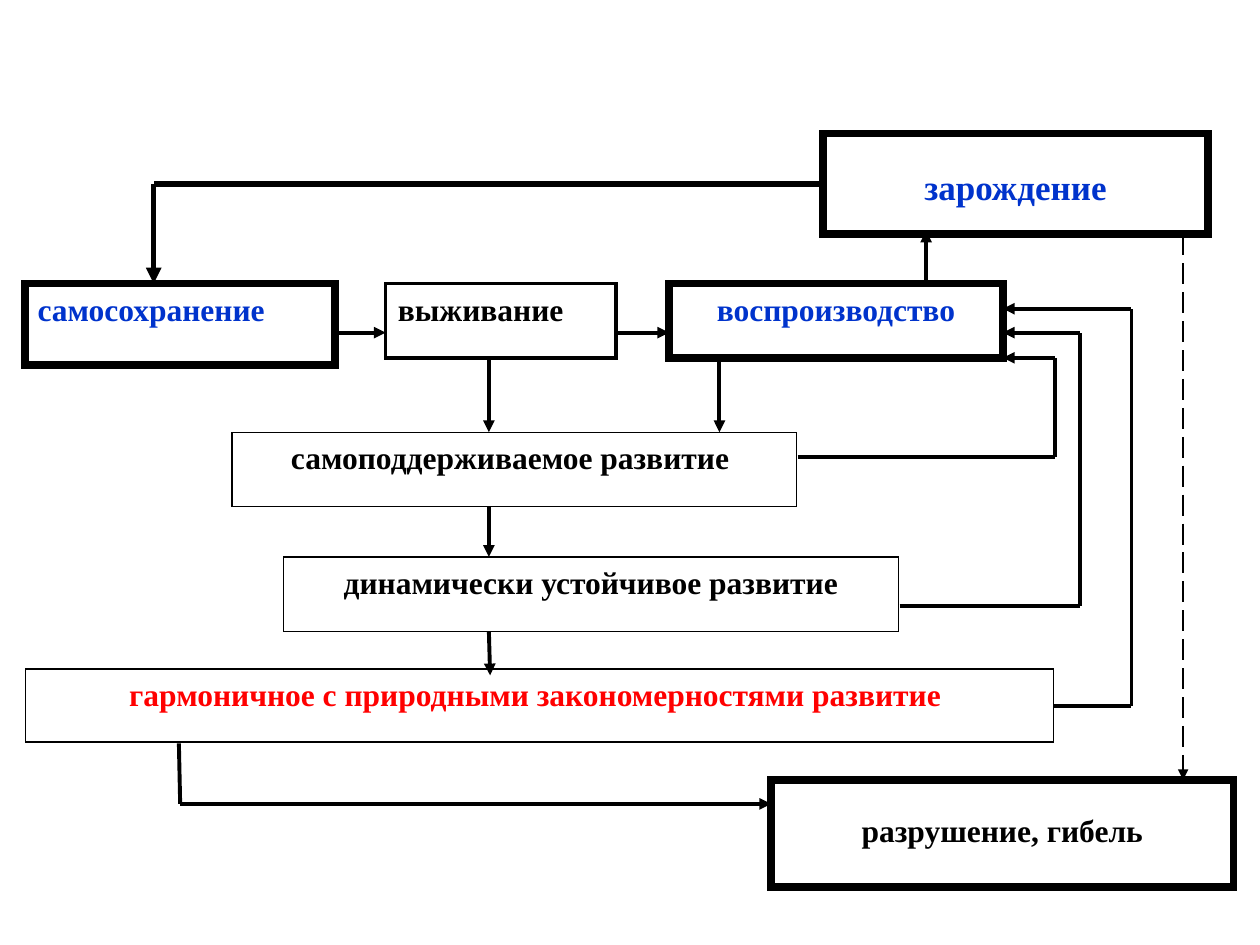
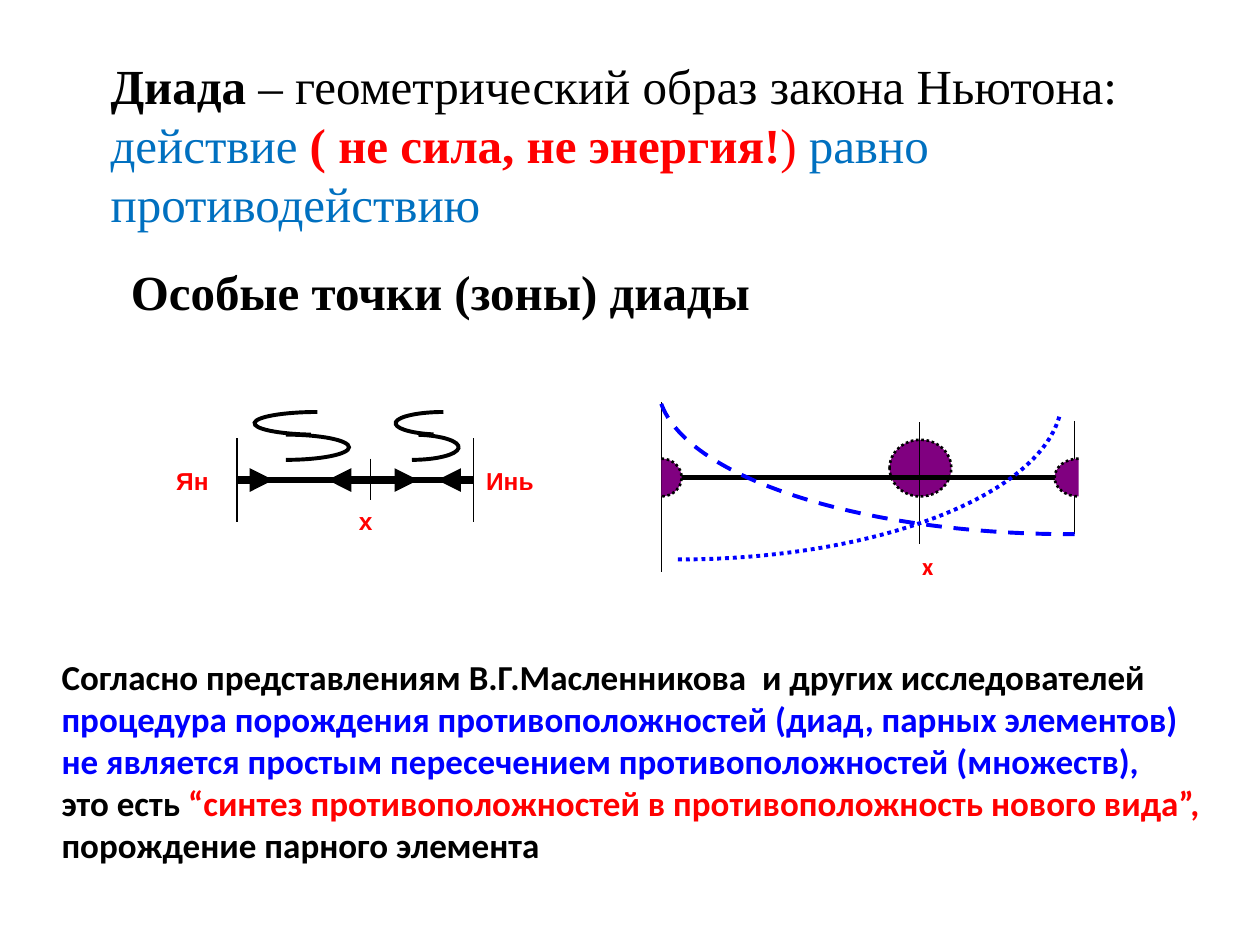
from copy import deepcopy
from dataclasses import dataclass
from math import ceil, cos, radians, sin, tan
from typing import NamedTuple, Optional

from lxml.etree import SubElement
from pptx import Presentation
from pptx.dml.color import RGBColor as RGB
from pptx.enum.dml import MSO_LINE as Dash
from pptx.enum.shapes import MSO_CONNECTOR as Conn, MSO_SHAPE as Geo
from pptx.enum.text import MSO_ANCHOR as Anchor, PP_ALIGN as Align
from pptx.oxml.ns import qn
from pptx.util import Pt

PX = 9144
LEFT, RIGHT = 1, 3


@dataclass(frozen=True)
class Theme:
    black: RGB = RGB(0, 0, 0)
    white: RGB = RGB(255, 255, 255)
    navy: RGB = RGB(0x00, 0x33, 0xCC)
    red: RGB = RGB(255, 0, 0)
    sky: RGB = RGB(0x00, 0x70, 0xC0)
    blue: RGB = RGB(0, 0, 255)
    purple: RGB = RGB(0x80, 0, 0x80)
    serif: str = "Times New Roman"
    sans: str = "Calibri"
    label_font: str = "Arial"
    title: int = 28
    body: int = 20
    stage: int = 18
    label: int = 14
    hair: float = 0.75
    dotted: float = 1.5
    line: float = 2.25
    strong: float = 3
    heavy: float = 4.5


T = Theme()


class Run(NamedTuple):
    text: str
    color: RGB = T.black
    bold: bool = True


class Style(NamedTuple):
    font: str
    size: int
    align: Align = Align.LEFT
    inset_top: int = 5


class Frame(NamedTuple):
    x: int
    y: int
    w: int
    h: int


class Box(NamedTuple):
    frame: Frame
    run: Run
    style: Style
    weight: float = 0


class Route(NamedTuple):
    points: list[tuple[int, int]]
    weight: float = T.line
    arrow: bool = True
    both: bool = False
    dash: Optional[Dash] = None
    start: str = ""
    site: int = 0


class Arc(NamedTuple):
    cx: int
    cy: int
    rx: int
    ry: int
    start: float
    end: float
    color: RGB = T.black
    weight: float = T.line
    dash: Optional[Dash] = None
    fill: Optional[RGB] = None


def write(sp, lines: list[list[Run]], style: Style) -> None:
    tf = sp.text_frame
    tf.word_wrap = True
    tf.vertical_anchor = Anchor.TOP
    tf.margin_top = style.inset_top * PX
    for i, runs in enumerate(lines):
        p = tf.add_paragraph() if i else tf.paragraphs[0]
        p.alignment = style.align
        for run in runs:
            r = p.add_run()
            r.text = run.text
            r.font.name = style.font
            r.font.size = Pt(style.size)
            r.font.bold = run.bold
            r.font.color.rgb = run.color


def paint(sp, fill: Optional[RGB], color: RGB, weight: float, dash: Optional[Dash] = None) -> None:
    sp.shadow.inherit = False
    if fill is None:
        sp.fill.background()
    else:
        sp.fill.solid()
        sp.fill.fore_color.rgb = fill
    if weight:
        sp.line.color.rgb = color
        sp.line.width = Pt(weight)
        if dash:
            sp.line.dash_style = dash
        SubElement(sp.element.spPr.get_or_add_ln(), qn("a:miter"), lim="800000")
    else:
        sp.line.fill.background()


def add_preset(s, geo: Geo, frame: Frame):
    return s.shapes.add_shape(geo, *(v * PX for v in frame))


def add_box(s, box: Box):
    sp = add_preset(s, Geo.RECTANGLE, box.frame)
    paint(sp, T.white, T.black, box.weight)
    write(sp, [[box.run]], box.style)
    return sp


def add_text(s, frame: Frame, lines: list[list[Run]], style: Style) -> None:
    write(s.shapes.add_textbox(*(v * PX for v in frame)), lines, style)


def add_route(s, route: Route, boxes: dict) -> None:
    legs = list(zip(route.points, route.points[1:]))
    for i, (a, b) in enumerate(legs):
        c = s.shapes.add_connector(Conn.STRAIGHT, *(v * PX for v in a + b))
        if i == 0 and route.start:
            c.begin_connect(boxes[route.start], route.site)
        c.line.color.rgb = T.black
        c.line.width = Pt(route.weight)
        if route.dash:
            c.line.dash_style = route.dash
        sp_pr = c.element.spPr
        ln = sp_pr.get_or_add_ln()
        if route.both:
            SubElement(ln, qn("a:headEnd"), type="triangle")
        if route.arrow and i == len(legs) - 1:
            SubElement(ln, qn("a:tailEnd"), type="triangle")
        SubElement(sp_pr, qn("a:effectLst"))


def add_arc(s, arc: Arc) -> None:
    count = ceil(abs(arc.end - arc.start) / 90)
    step = radians(arc.end - arc.start) / count
    angles = [radians(arc.start) + step * i for i in range(count + 1)]
    reach = 4 / 3 * tan(step / 4)

    def at(angle: float, pull: float = 0) -> tuple[int, int]:
        return (round((arc.cx + arc.rx * (cos(angle) - pull * sin(angle))) * PX),
                round((arc.cy + arc.ry * (sin(angle) + pull * cos(angle))) * PX))

    hub = (arc.cx * PX, arc.cy * PX)
    builder = s.shapes.build_freeform(*at(angles[0]), scale=1.0)
    builder.add_line_segments([at(a) for a in angles[1:]] + [hub], close=True)
    sp = builder.convert_to_shape()
    paint(sp, arc.fill, arc.color, arc.weight, arc.dash)

    wedge = next(sp.element.iter(qn("a:path")))
    lines = wedge.findall(qn("a:lnTo"))
    for line, a, b in zip(lines, angles, angles[1:]):
        line.tag = qn("a:cubicBezTo")
        line.clear()
        for x, y in (at(a, reach), at(b, -reach), at(b)):
            SubElement(line, qn("a:pt"), x=str(x - sp.left), y=str(y - sp.top))
    rim = deepcopy(wedge)
    for part in rim.findall(qn("a:lnTo")) + rim.findall(qn("a:close")):
        rim.remove(part)
    rim.set("fill", "none")
    wedge.set("stroke", "0")
    wedge.addprevious(rim)


def build_life_cycle(s) -> None:
    left = Style(T.serif, T.stage)
    centred = Style(T.serif, T.stage, Align.CENTER)
    lowered = Style(T.serif, T.stage, Align.CENTER, 25)
    stages = {
        "preservation": Box(Frame(20, 225, 246, 65), Run("самосохранение", T.navy), left, T.heavy),
        "survival": Box(Frame(306, 225, 183, 59), Run("выживание"), left, T.line),
        "reproduction": Box(Frame(531, 225, 265, 59), Run("воспроизводство", T.navy), centred, T.heavy),
        "self_sustained": Box(Frame(184, 343, 448, 59), Run("самоподдерживаемое развитие "), centred, T.hair),
        "stable": Box(Frame(225, 442, 488, 59), Run("динамически устойчивое развитие"), centred, T.hair),
        "harmonious": Box(Frame(20, 531, 816, 58),
                          Run("гармоничное с природными закономерностями развитие ", T.red), centred, T.hair),
        "destruction": Box(Frame(612, 619, 367, 85), Run("разрушение, гибель"), lowered, T.heavy),
        "birth": Box(Frame(653, 106, 306, 80), Run("зарождение", T.navy),
                     lowered._replace(size=T.body), T.heavy),
    }
    boxes = {name: add_box(s, box) for name, box in stages.items()}
    routes = [
        Route([(265, 264), (306, 264)]),
        Route([(490, 264), (531, 264)]),
        Route([(388, 284), (388, 343)]),
        Route([(571, 284), (571, 343)]),
        Route([(388, 402), (388, 442)]),
        Route([(388, 501), (389, 536)]),
        Route([(735, 222), (735, 183)]),
        Route([(653, 146), (122, 146), (122, 225)], T.strong, start="birth", site=LEFT),
        Route([(939, 186), (939, 619)], T.dotted, dash=Dash.LONG_DASH),
        Route([(142, 590), (143, 638), (612, 638)]),
        Route([(836, 560), (898, 560), (898, 245), (796, 245)], start="harmonious", site=RIGHT),
        Route([(714, 481), (857, 481), (857, 264), (796, 264)]),
        Route([(633, 363), (837, 363), (837, 284), (796, 284)]),
    ]
    for route in routes:
        add_route(s, route, boxes)


def build_dyad(s) -> None:
    title = Style(T.serif, T.title)
    add_text(s, Frame(78, 39, 836, 151), [
        [Run("Диада"), Run(" – геометрический образ закона Ньютона:", bold=False)],
        [Run("действие ", T.sky, False), Run("( не сила, не энергия!", T.red),
         Run(") ", T.red, False), Run("равно", T.sky, False)],
        [Run("противодействию", T.sky, False)],
    ], title)
    add_text(s, Frame(94, 203, 797, 57), [[Run("Особые точки (зоны) диады")]], title)
    add_text(s, Frame(39, 515, 930, 178), [
        [Run("Согласно представлениям В.Г.Масленникова  и других исследователей")],
        [Run("процедура порождения противоположностей (диад, парных элементов)", T.blue)],
        [Run("не является простым пересечением противоположностей (множеств),", T.blue)],
        [Run("это есть "), Run("“синтез противоположностей в противоположность нового вида”,", T.red)],
        [Run("порождение парного элемента")],
    ], Style(T.sans, T.body))

    pole = Style(T.label_font, T.label)
    for label in [
        Box(Frame(130, 365, 58, 49), Run("Ян", T.red), pole),
        Box(Frame(376, 365, 72, 66), Run("Инь", T.red), pole),
        Box(Frame(275, 397, 43, 33), Run("х", T.red), pole),
        Box(Frame(722, 432, 49, 45), Run("х", T.red), Style(T.sans, T.label)),
    ]:
        add_box(s, label)

    paint(add_preset(s, Geo.OVAL, Frame(706, 349, 49, 45)), T.purple, T.black, T.dotted, Dash.ROUND_DOT)

    axes = [Route([(525, 379), (853, 379)], T.strong, False),
            Route([(188, 381), (376, 381)], T.strong, False)]
    ticks = [Route([(x, top), (x, bottom)], T.hair, False) for x, top, bottom in [
        (525, 319, 454), (853, 334, 424), (730, 335, 432),
        (188, 348, 414), (376, 348, 414), (294, 364, 397)]]
    forces = [Route([(188, 381), (217, 381)], T.heavy),
              Route([(376, 381), (347, 381)], T.heavy),
              Route([(260, 381), (332, 381)], T.heavy, both=True)]
    for route in axes + ticks + forces:
        add_route(s, route, {})

    zone = dict(weight=T.dotted, dash=Dash.ROUND_DOT, fill=T.purple)
    for arc in [
        Arc(850, 305, 328, 119, 172.5, 89.5, T.blue, dash=Dash.DASH),
        Arc(538, 315, 305, 129, 7, 90, T.blue, dash=Dash.ROUND_DOT),
        Arc(856, 379, 19, 15, 270, 90, **zone),
        Arc(525, 379, 16, 15, -90, 90, **zone),
        Arc(227, 355, 50, 10, -90, 90),
        Arc(252, 336, 50, 9, 270, 96),
        Arc(327, 355, 37, 10, -82, 90),
        Arc(352, 336, 38, 9, 270, 102),
    ]:
        add_arc(s, arc)


def main() -> None:
    prs = Presentation()
    prs.slide_width, prs.slide_height = 1000 * PX, 750 * PX
    for build in (build_life_cycle, build_dyad):
        build(prs.slides.add_slide(prs.slide_layouts[6]))
    prs.save("out.pptx")


if __name__ == "__main__":
    main()
